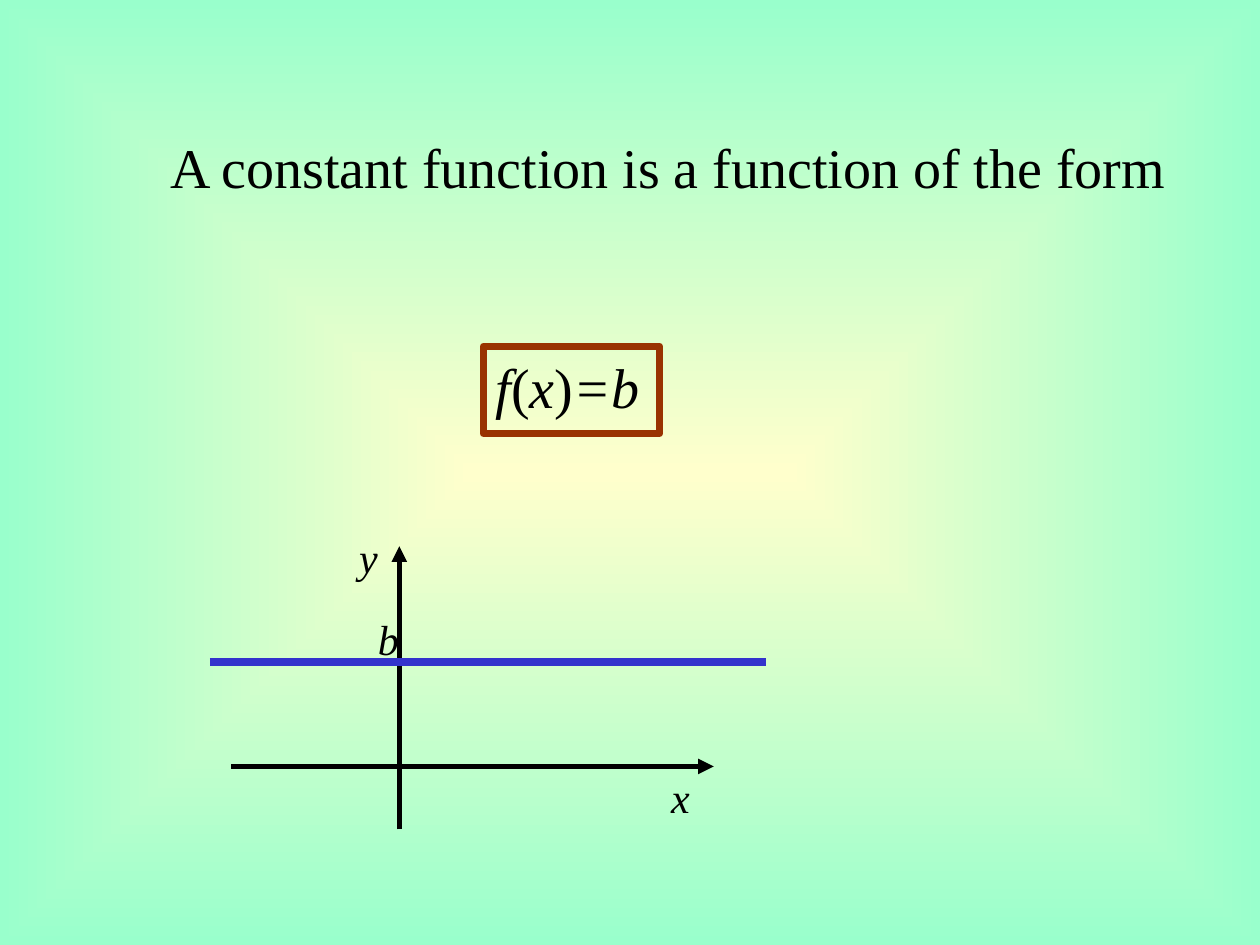
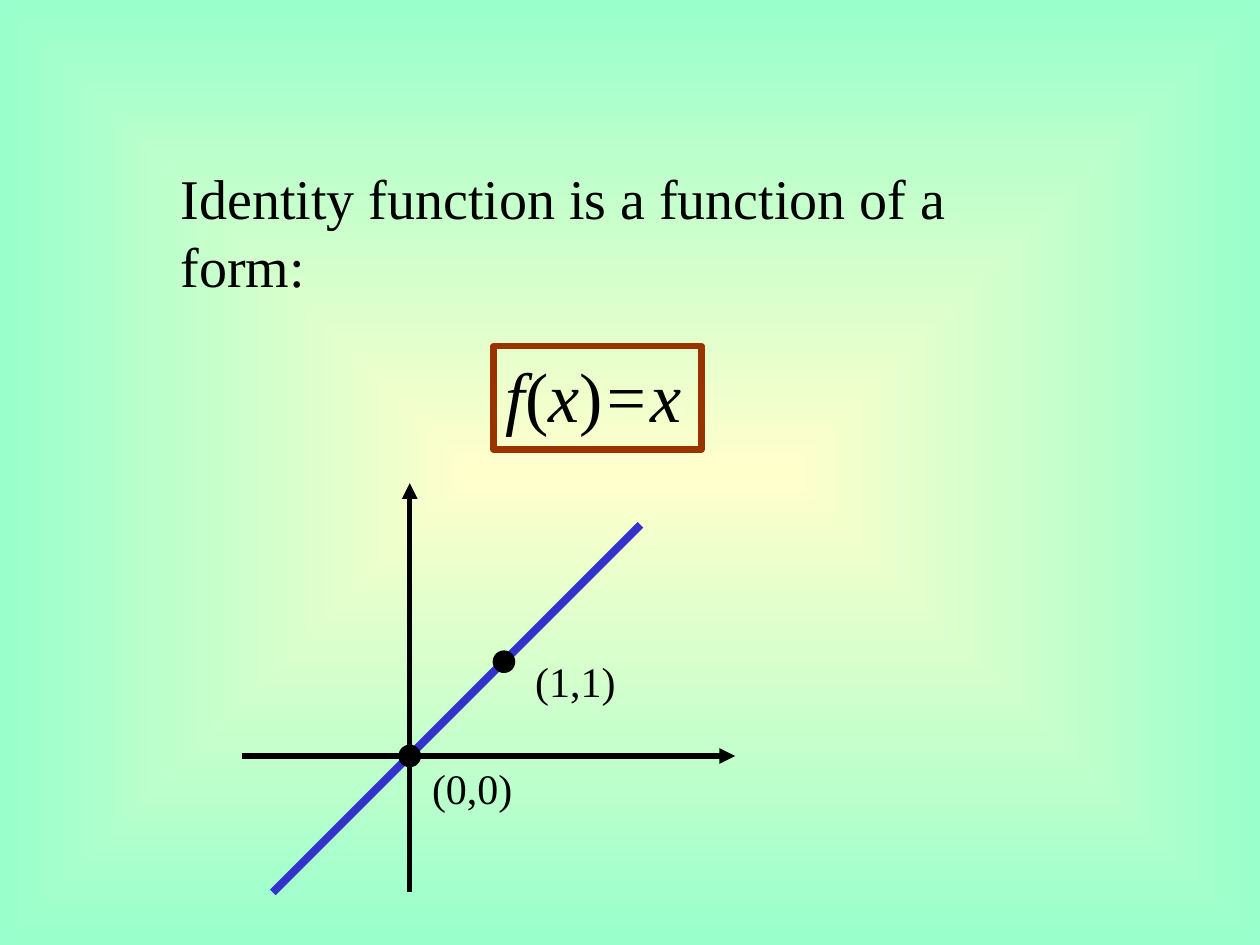
from lxml import etree
from pptx import Presentation
from pptx.dml.color import RGBColor
from pptx.enum.shapes import MSO_CONNECTOR, MSO_SHAPE
from pptx.enum.text import MSO_AUTO_SIZE
from pptx.oxml.ns import qn
from pptx.util import Cm, Pt

STRAIGHT = MSO_CONNECTOR.STRAIGHT
OVAL = MSO_SHAPE.OVAL
GROW = MSO_AUTO_SIZE.SHAPE_TO_FIT_TEXT

FONT = "Times New Roman"
BLACK, BLUE, BROWN = "000000", "3333CC", "993300"
CENTRE_COLOUR, EDGE_COLOUR = "FFFFCC", "99FFCC"
DOT_SIZE = 0.43

# Lengths are centimetres; boxes are (left, top, width, height).
# Axes run from start to end through the origin; graph lines join two points.
SLIDES = [
    {
        "title": "A constant function is a function of the form",
        "title_box": (3.18, 2.54, 20.65, 1.6),
        "formula": ["f", "(", "x", ")", "=b"],
        "formula_box": (9.74, 6.98, 3.56, 1.76),
        "formula_size": 32,
        "formula_line": 4,
        "origin": (8.05, 15.45),
        "x_axis": (4.66, 14.39),
        "y_axis": (16.72, 11.01),
        "graph": [(4.23, 13.34), (15.45, 13.34)],
        "dots": [],
        "labels": [
            ("b", (7.37, 12.24, 0.94, 1.27), True),
            ("x", (13.28, 15.42, 0.89, 1.27), True),
            ("y", (6.99, 10.59, 0.89, 1.27), True),
        ],
    },
    {
        "title": "Identity function is a function of a form:",
        "title_box": (3.39, 3.18, 18, 1.6),
        "formula": ["f", "(", "x", ")", "=x"],
        "formula_box": (9.95, 6.98, 4.19, 2.08),
        "formula_size": 40,
        "formula_line": 3.75,
        "origin": (8.26, 15.24),
        "x_axis": (4.87, 14.82),
        "y_axis": (17.99, 9.74),
        "graph": [(5.5, 17.99), (12.91, 10.58)],
        "dots": [(10.16, 13.34), (8.26, 15.24)],
        "labels": [
            ("(1,1)", (10.54, 13.08, 2.13, 1.27), False),
            ("(0,0)", (8.46, 15.24, 2.13, 1.27), False),
        ],
    },
]


def colour(hex_string):
    return RGBColor.from_string(hex_string)


def paint_background(slide):
    """Fill the background with a gradient running from the centre outwards."""
    fill = slide.background.fill
    fill.gradient()
    for stop, hex_string in zip(fill.gradient_stops, (CENTRE_COLOUR, EDGE_COLOUR)):
        stop.color.rgb = colour(hex_string)
    gradient = slide.element.find(".//" + qn("a:gradFill"))
    gradient.remove(gradient.find(qn("a:lin")))
    route = etree.SubElement(gradient, qn("a:path"), {"path": "shape"})
    etree.SubElement(route, qn("a:fillToRect"), dict.fromkeys("ltrb", "50000"))


def add_text(slide, runs, box, size=24, italic=False, wrap=False):
    """Add a text box; runs after the first alternate between italic and upright."""
    shape = slide.shapes.add_textbox(*map(Cm, box))
    frame = shape.text_frame
    frame.word_wrap = wrap
    frame.auto_size = GROW
    for index, text in enumerate(runs):
        run = frame.paragraphs[0].add_run()
        run.text = text
        run.font.name = FONT
        run.font.size = Pt(size)
        run.font.italic = italic and index % 2 == 0
        run.font.color.rgb = colour(BLACK)
    return shape


def add_line(slide, start, end, line_colour=BLACK, width=3, arrow=False):
    connector = slide.shapes.add_connector(STRAIGHT, *map(Cm, (*start, *end)))
    connector.line.color.rgb = colour(line_colour)
    connector.line.width = Pt(width)
    if arrow:
        line = connector.line._get_or_add_ln()
        etree.SubElement(line, qn("a:tailEnd"), {"type": "triangle"})
    etree.SubElement(connector.element.spPr, qn("a:effectLst"))


def add_dot(slide, x, y):
    corner = (x - DOT_SIZE / 2, y - DOT_SIZE / 2)
    dot = slide.shapes.add_shape(OVAL, *map(Cm, (*corner, DOT_SIZE, DOT_SIZE)))
    dot.shadow.inherit = False
    dot.fill.solid()
    dot.fill.fore_color.rgb = colour(BLACK)
    dot.line.color.rgb = colour(BLACK)
    dot.line.width = Pt(0.75)


def add_function_slide(presentation, content):
    slide = presentation.slides.add_slide(presentation.slide_layouts[6])
    paint_background(slide)
    add_text(slide, [content["title"]], content["title_box"], size=32, wrap=True)

    formula = add_text(slide, content["formula"], content["formula_box"],
                       size=content["formula_size"], italic=True)
    formula.line.color.rgb = colour(BROWN)
    formula.line.width = Pt(content["formula_line"])

    origin_x, origin_y = content["origin"]
    left, right = content["x_axis"]
    bottom, top = content["y_axis"]
    add_line(slide, (left, origin_y), (right, origin_y), arrow=True)
    add_line(slide, (origin_x, bottom), (origin_x, top), arrow=True)
    add_line(slide, *content["graph"], line_colour=BLUE, width=4.5)
    for x, y in content["dots"]:
        add_dot(slide, x, y)
    for text, box, italic in content["labels"]:
        add_text(slide, [text], box, italic=italic)


def main():
    presentation = Presentation()
    presentation.slide_width = Cm(25.4)
    presentation.slide_height = Cm(19.05)
    for content in SLIDES:
        add_function_slide(presentation, content)
    presentation.save("out.pptx")


if __name__ == "__main__":
    main()
